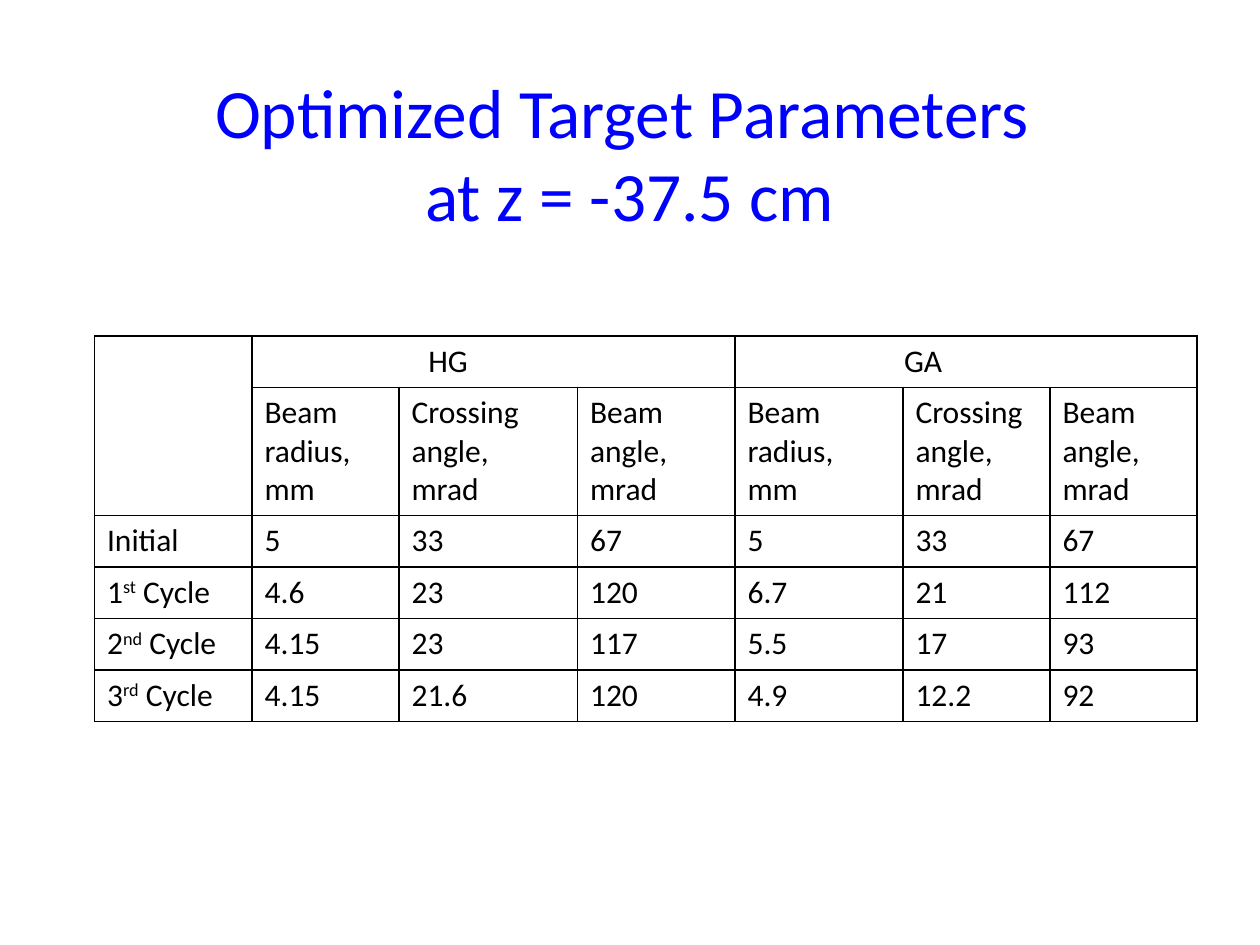
from dataclasses import dataclass
from lxml import etree
from pptx import Presentation
from pptx import util as u
from pptx.dml.color import RGBColor
from pptx.enum import text
from pptx.oxml import ns


@dataclass
class Theme:
    font: str = "Calibri"
    head: str = "0000FF"
    ink: str = "000000"
    paper: str = "FFFFFF"
    big: float = 39.6
    small: float = 18
    rule: float = 1


class Deck:
    COLS, ROWS = 120, 90

    def __init__(self, theme):
        self.theme = theme
        self.file = Presentation()
        self.file.slide_width = u.Inches(10)
        self.file.slide_height = u.Inches(7.5)
        self.slide = self.file.slides.add_slide(self.file.slide_layouts[6])

    def wide(self, cols):
        return round(self.file.slide_width * cols / self.COLS)

    def high(self, rows):
        return round(self.file.slide_height * rows / self.ROWS)

    def area(self, x, y, w, h):
        return self.wide(x), self.high(y), self.wide(w), self.high(h)

    def run(self, para, words, size, color, raised=False):
        run = para.add_run()
        run.text = words
        run.font.name = self.theme.font
        run.font.size = u.Pt(size)
        run.font.color.rgb = RGBColor.from_string(color)
        if raised:
            run.font._element.set("baseline", "30000")

    def title(self, lines, area):
        frame = self.slide.shapes.add_textbox(*self.area(*area)).text_frame
        frame.word_wrap = True
        frame.vertical_anchor = text.MSO_ANCHOR.MIDDLE
        para = frame.paragraphs[0]
        para.alignment = text.PP_ALIGN.CENTER
        for i, line in enumerate(lines):
            if i:
                para.add_line_break()
            self.run(para, line, self.theme.big, self.theme.head)

    def frame(self, cell):
        props = cell._tc.get_or_add_tcPr()
        for side in ("lnL", "lnR", "lnT", "lnB"):
            line = etree.SubElement(props, ns.qn(f"a:{side}"), w=str(u.Pt(self.theme.rule)))
            fill = etree.SubElement(line, ns.qn("a:solidFill"))
            etree.SubElement(fill, ns.qn("a:srgbClr"), val=self.theme.ink)
        cell.fill.solid()
        cell.fill.fore_color.rgb = RGBColor.from_string(self.theme.paper)

    def fill(self, cell, paras, indent=0):
        for i, parts in enumerate(paras):
            para = cell.text_frame.add_paragraph() if i else cell.text_frame.paragraphs[0]
            if indent:
                para._p.get_or_add_pPr().set("marL", str(self.wide(indent)))
            for j, words in enumerate(parts):
                self.run(para, words, self.theme.small, self.theme.ink, raised=j == 1)

    def table(self, x, y, widths, heights):
        area = self.area(x, y, sum(widths), sum(heights))
        table = self.slide.shapes.add_table(len(heights), len(widths), *area).table
        table.first_row = table.horz_banding = False
        for col, width in zip(table.columns, widths):
            col.width = self.wide(width)
        for row, height in zip(table.rows, heights):
            row.height = self.high(height)
        for cell in table.iter_cells():
            self.frame(cell)
        return table

    def save(self):
        self.file.save("out.pptx")


GROUPS = [("HG", 1, 15.6), ("GA", 4, 14.9)]
HEADS = [("Beam radius,", "mm"), ("Crossing angle,", "mrad"), ("Beam angle,", "mrad")]
DATA = [
    (["Initial"], "5 33 67 5 33 67"),
    (["1", "st", " Cycle"], "4.6 23 120 6.7 21 112"),
    (["2", "nd", " Cycle"], "4.15 23 117 5.5 17 93"),
    (["3", "rd", " Cycle"], "4.15 21.6 120 4.9 12.2 92"),
]


def main():
    deck = Deck(Theme())
    deck.title(["Optimized Target Parameters ", "at z = -37.5 cm"], (6, 7, 108, 15))
    table = deck.table(9, 32, [15, 14, 17, 15, 16, 14, 14], [4.9, 12.2] + [4.9] * 4)
    table.cell(0, 0).merge(table.cell(1, 0))
    for name, col, indent in GROUPS:
        table.cell(0, col).merge(table.cell(0, col + 2))
        deck.fill(table.cell(0, col), [[name]], indent)
        for i, head in enumerate(HEADS):
            deck.fill(table.cell(1, col + i), [[line] for line in head])
    for row, (label, values) in enumerate(DATA, 2):
        deck.fill(table.cell(row, 0), [label])
        for col, value in enumerate(values.split(), 1):
            deck.fill(table.cell(row, col), [[value]])
    deck.save()


if __name__ == "__main__":
    main()
